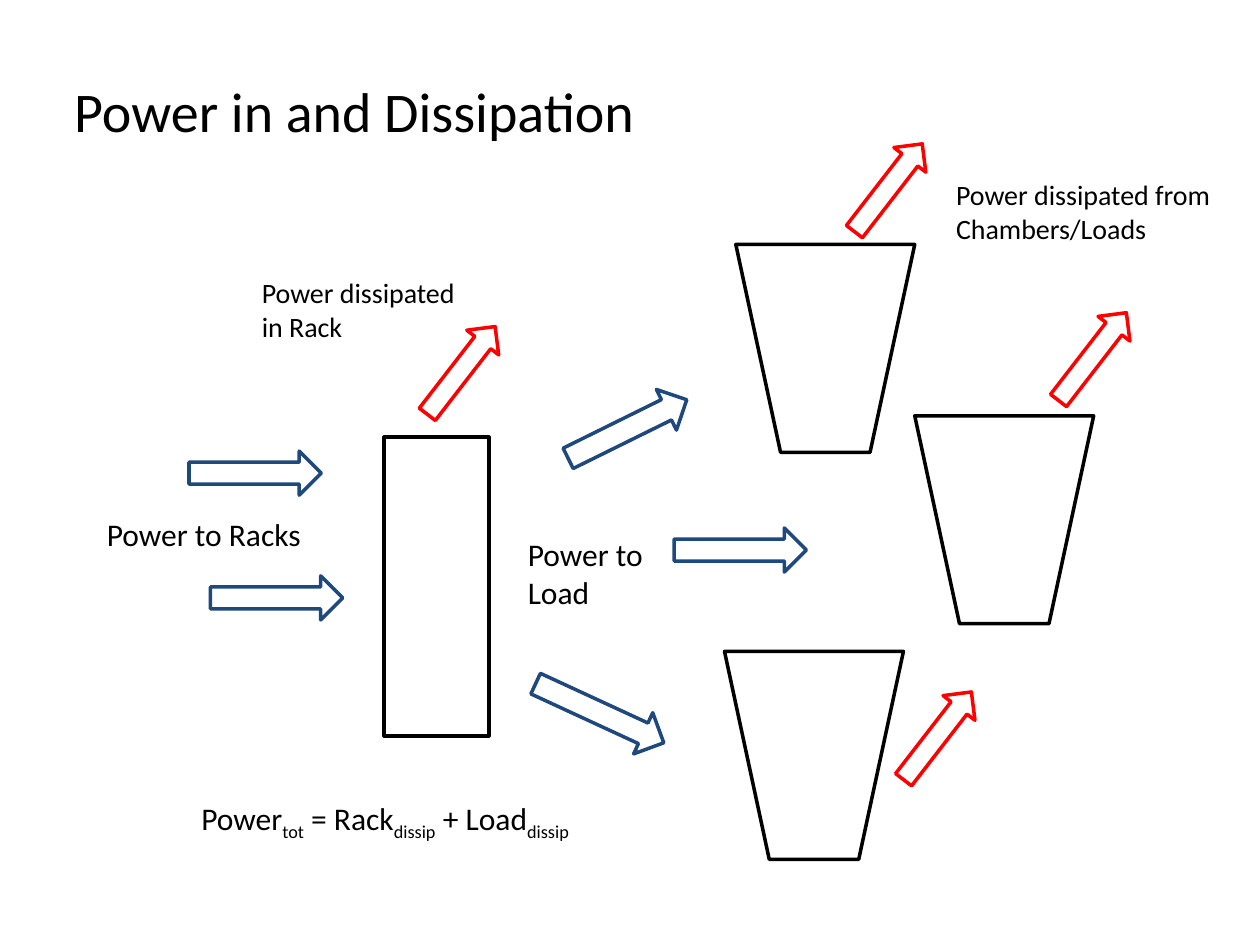
import pptx
import pptx.util
import pptx.dml.color
import pptx.enum.shapes
import pptx.enum.text

Inches, Pt = pptx.util.Inches, pptx.util.Pt
RGB = pptx.dml.color.RGBColor.from_string
KIND = pptx.enum.shapes.MSO_SHAPE

# Content: text boxes as (left, top, width, height, size, parts); "_" marks a subscript
labels = [
    (0.49, 0.56, 4.72, 0.64, "title", ["Power in and Dissipation"]),
    (0.75, 4.04, 1.97, 0.4, "label", ["Power to Racks"]),
    (1.98, 2.14, 1.9, 0.64, "note", ["Power dissipated in Rack"]),
    (7.49, 1.36, 2.36, 0.64, "note", ["Power dissipated from Chambers/Loads"]),
    (4.09, 4.2, 1.11, 0.71, "label", ["Power to Load"]),
    (1.5, 6.29, 3.26, 0.4, "label",
     ["Power", "_tot", " = Rack", "_dissip", " + Load", "_dissip"]),
]

# Content: shapes that share a size, by left and top
rack = (3.05, 3.47, 0.83, 2.37)
loads = [(5.84, 1.94), (5.75, 5.17), (7.26, 3.3)]
feeds = [(1.85, 3.23), (2.02, 4.22), (5.7, 3.84)]
heats = [(3.5, 2.5), (6.89, 1.05), (8.51, 2.39), (7.28, 5.4)]
slants = [(4.58, 5.1, 0.36, 1.12, 294.8), (4.8, 2.88, 0.36, 1.05, 243.7)]

theme = {
    "font": "Calibri", "ink": "000000", "power": "1F497D", "heat": "FF0000",
    "line": 2, "title": 32, "label": 18, "note": 16,
}

deck = pptx.Presentation()
deck.slide_width, deck.slide_height = Inches(10), Inches(7.5)
slide = deck.slides.add_slide(deck.slide_layouts[6])


def outline(kind, box, turn, color):
    shape = slide.shapes.add_shape(kind, *map(Inches, box))
    shape.rotation = turn
    shape.shadow.inherit = False
    shape.fill.background()
    shape.line.color.rgb = RGB(theme[color])
    shape.line.width = Pt(theme["line"])


def label(box, size, parts):
    frame = slide.shapes.add_textbox(*map(Inches, box)).text_frame
    frame.word_wrap = True
    frame.auto_size = pptx.enum.text.MSO_AUTO_SIZE.SHAPE_TO_FIT_TEXT
    style = {"name": theme["font"], "size": Pt(theme[size])}
    for part in parts:
        run = frame.paragraphs[0].add_run()
        run.text = part.lstrip("_")
        for key, value in style.items():
            setattr(run.font, key, value)
        run.font.color.rgb = RGB(theme["ink"])
        if part.startswith("_"):
            run._r.get_or_add_rPr().set("baseline", "-25000")


# Rack and loads
outline(KIND.RECTANGLE, rack, 0, "ink")
for spot in loads:
    outline(KIND.TRAPEZOID, (*spot, 1.42, 1.65), 180, "ink")

# Power arrows, then heat arrows
for spot in feeds:
    outline(KIND.DOWN_ARROW, (*spot, 0.35, 1.05), 270, "power")
for *box, turn in slants:
    outline(KIND.DOWN_ARROW, box, turn, "power")
for spot in heats:
    outline(KIND.DOWN_ARROW, (*spot, 0.32, 0.88), 217.7, "heat")

# Text
for *box, size, parts in labels:
    label(box, size, parts)

deck.save("out.pptx")
